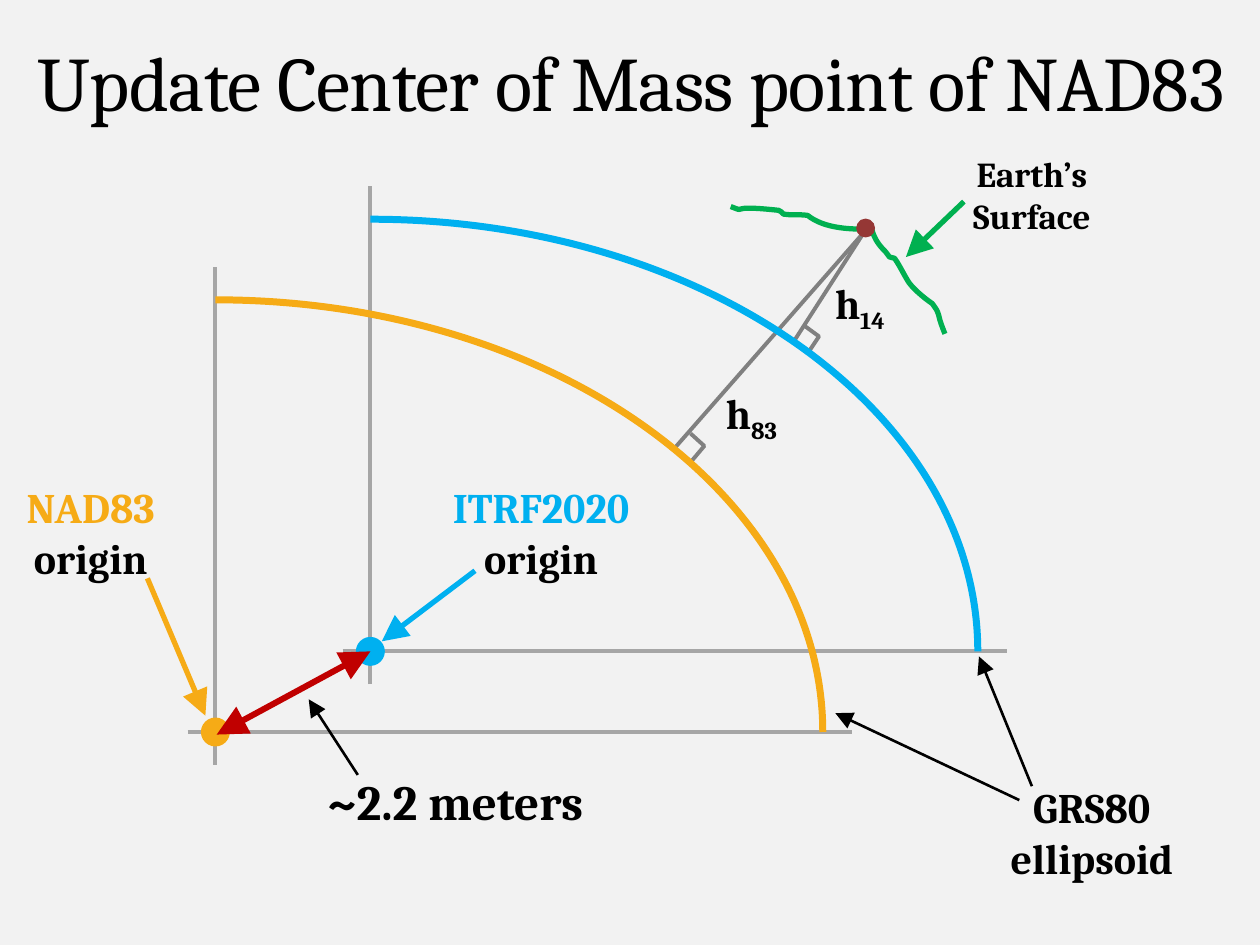
import lxml.etree
import pptx
import pptx.dml.color
import pptx.enum.shapes
import pptx.enum.text
import pptx.oxml.ns
import pptx.util

Inches = pptx.util.Inches
RGBColor = pptx.dml.color.RGBColor
qn = pptx.oxml.ns.qn

FONT = "Cambria"
PAPER = RGBColor(0xF2, 0xF2, 0xF2)
BLACK = RGBColor(0, 0, 0)
AXIS_GREY = RGBColor(0xA6, 0xA6, 0xA6)
HEIGHT_GREY = RGBColor(0x80, 0x80, 0x80)
GREEN = RGBColor(0x00, 0xB0, 0x50)
ORANGE = RGBColor(0xF6, 0xAB, 0x16)
BLUE = RGBColor(0x00, 0xB0, 0xF0)
RED = RGBColor(0xC0, 0, 0)
BROWN = RGBColor(0x95, 0x37, 0x35)

NAD83_ORIGIN = (1.71, 5.81)
ITRF_ORIGIN = (2.94, 5.17)
STATION = (6.86, 1.84)
ARC_WIDTH, ARC_HEIGHT = 4.82, 3.43


def add_line(page, start, end, color, width, heads=()):
    """Straight line; heads may hold "headEnd" (start) and "tailEnd" (end)."""
    line = page.shapes.add_connector(
        pptx.enum.shapes.MSO_CONNECTOR.STRAIGHT,
        *(Inches(value) for value in (*start, *end)))
    line.line.color.rgb = color
    line.line.width = pptx.util.Pt(width)
    properties = line._element.spPr
    for head in heads:
        lxml.etree.SubElement(properties.find(qn("a:ln")), qn("a:" + head),
                              type="triangle", w="lg", len="lg")
    lxml.etree.SubElement(properties, qn("a:effectLst"))


def add_outline(page, points, color, width):
    """Open, unfilled outline through points."""
    corners = [(Inches(x), Inches(y)) for x, y in points]
    builder = page.shapes.build_freeform(*corners[0], scale=1.0)
    builder.add_line_segments(corners[1:], close=False)
    outline = builder.convert_to_shape()
    outline.shadow.inherit = False
    outline.fill.background()
    outline.line.color.rgb = color
    outline.line.width = pptx.util.Pt(width)
    return outline


def add_curve(page, points, color, width):
    """Joined cubic curves: a start, then two controls and an end for each."""
    outline = add_outline(page, points, color, width)
    steps = list(outline._element.iter(qn("a:lnTo")))
    for first in range(0, len(steps), 3):
        curve = steps[first]
        curve.tag = qn("a:cubicBezTo")
        for step in steps[first + 1:first + 3]:
            curve.append(step[0])
            step.getparent().remove(step)


def add_dot(page, center, size, color):
    dot = page.shapes.add_shape(
        pptx.enum.shapes.MSO_SHAPE.FLOWCHART_CONNECTOR, Inches(center[0] - size / 2),
        Inches(center[1] - size / 2), Inches(size), Inches(size))
    dot.shadow.inherit = False
    dot.fill.solid()
    dot.fill.fore_color.rgb = color
    dot.line.fill.background()


def style_span(span, size, color, bold):
    span.font.name = FONT
    span.font.size = pptx.util.Pt(size)
    span.font.bold = bold
    span.font.color.rgb = color


def add_label(page, box, lines, size, first_color=BLACK, subscript="", wrap=False):
    label = page.shapes.add_textbox(*(Inches(value) for value in box))
    frame = label.text_frame
    frame.text = "\n".join(lines)
    frame.word_wrap = wrap
    frame.auto_size = pptx.enum.text.MSO_AUTO_SIZE.SHAPE_TO_FIT_TEXT
    frame.vertical_anchor = pptx.enum.text.MSO_ANCHOR.MIDDLE
    if subscript:
        span = frame.paragraphs[0].add_run()
        span.text = subscript
        span.font._element.set("baseline", "-25000")
    for index, para in enumerate(frame.paragraphs):
        para.alignment = pptx.enum.text.PP_ALIGN.CENTER
        for span in para.runs:
            style_span(span, size, BLACK if index else first_color, True)


def fill_title(page, box):
    title = page.shapes.title
    title.left, title.top, title.width, title.height = (Inches(value) for value in box)
    frame = title.text_frame
    frame.text = "Update Center of Mass point of "
    frame.margin_left = frame.margin_right = frame.margin_bottom = 0
    frame.margin_top = Inches(0.02)
    frame.word_wrap = True
    frame.auto_size = pptx.enum.text.MSO_AUTO_SIZE.SHAPE_TO_FIT_TEXT
    frame.vertical_anchor = pptx.enum.text.MSO_ANCHOR.MIDDLE
    para = frame.paragraphs[0]
    para.alignment = pptx.enum.text.PP_ALIGN.CENTER
    para._p.get_or_add_pPr().set("marL", str(Inches(0.02)))
    para.add_run().text = "NAD83"
    for span, spacing in zip(para.runs, ("-40", "0")):
        style_span(span, 44, BLACK, False)
        span.font._element.set("spc", spacing)


def draw_axes(page, origin):
    x, y = origin
    add_line(page, (x, y + 0.26), (x, y - 3.69), AXIS_GREY, 2.25)
    add_line(page, (x - 0.22, y), (x + 5.05, y), AXIS_GREY, 2.25)


def draw_ellipsoid(page, origin, color):
    """Quarter ellipse from above the origin to its right."""
    x, y = origin
    top, right = y - ARC_HEIGHT, x + ARC_WIDTH
    add_curve(page, [(x, top), (x + 2.66, top), (right, y - 1.89), (right, y)], color, 4)


def draw_height(page, foot, corner):
    """Height from an ellipsoid to the station, with its right-angle mark."""
    add_line(page, foot, STATION, HEIGHT_GREY, 2.25)
    add_outline(page, corner, HEIGHT_GREY, 2.25)


def draw_surface(page, left, top):
    """Terrain profile, in offsets from its top left corner."""
    profile = [
        (0.07, 0.02),
        (0.23, 0.08), (0, 0), (0.45, 0.05),
        (0.47, 0.05), (0.47, 0.07), (0.49, 0.08),
        (0.55, 0.09), (0.61, 0.08), (0.68, 0.09),
        (0.82, 0.2), (1.03, 0.2), (1.19, 0.2),
        (1.21, 0.28), (1.25, 0.33), (1.3, 0.38),
        (1.31, 0.39), (1.32, 0.41), (1.33, 0.42),
        (1.34, 0.43), (1.36, 0.42), (1.37, 0.43),
        (1.4, 0.47), (1.44, 0.55), (1.47, 0.6),
        (1.5, 0.66), (1.61, 0.75), (1.67, 0.79),
        (1.69, 0.82), (1.71, 0.84), (1.72, 0.88),
        (1.73, 0.93), (1.75, 0.98), (1.77, 1.03),
    ]
    add_curve(page, [(left + x, top + y) for x, y in profile], GREEN, 3)


def draw_labels(page):
    add_label(page, (2.35, 6.07, 2.53, 0.57), ["~2.2 meters"], 28, wrap=True)
    add_label(page, (0.08, 3.77, 1.28, 0.91), ["NAD83", "origin"], 24, ORANGE)
    add_label(page, (3.38, 3.77, 1.83, 0.91), ["ITRF2020", "origin"], 24, BLUE, wrap=True)
    add_label(page, (7.61, 1.16, 1.16, 0.77), ["Earth’s", "Surface"], 20)
    add_label(page, (5.63, 3.05, 0.67, 0.5), ["h"], 24, subscript="83")
    add_label(page, (6.49, 2.18, 0.67, 0.5), ["h"], 24, subscript="14")
    add_label(page, (7.89, 6.15, 1.55, 0.91), ["GRS80", "ellipsoid"], 24)


def draw_pointers(page):
    """Arrows from the labels to what they name."""
    for start, end, color, width in (
            ((1.17, 4.59), (1.63, 5.68), ORANGE, 3),
            ((3.77, 4.53), (3.03, 5.09), BLUE, 3),
            ((8.09, 6.35), (6.63, 5.66), BLACK, 1.5),
            ((8.19, 6.24), (7.77, 5.21), BLACK, 1.5),
            ((7.65, 1.6), (7.19, 2.04), GREEN, 3),
            ((2.84, 6.15), (2.45, 5.55), BLACK, 1.5)):
        add_line(page, start, end, color, width, ["tailEnd"])


def main():
    deck = pptx.Presentation()
    deck.slide_width, deck.slide_height = Inches(10), Inches(7.5)
    page = deck.slides.add_slide(deck.slide_layouts[5])
    page.background.fill.solid()
    page.background.fill.fore_color.rgb = PAPER
    fill_title(page, (0, 0.25, 10, 0.76))

    # Axes, heights and terrain
    frames = ((NAD83_ORIGIN, ORANGE), (ITRF_ORIGIN, BLUE))
    for origin, color in frames:
        draw_axes(page, origin)
    draw_height(page, (6.3, 2.71), [(6.39, 2.59), (6.5, 2.67), (6.42, 2.79)])
    draw_height(page, (5.36, 3.55), [(5.48, 3.44), (5.59, 3.54), (5.48, 3.67)])
    draw_surface(page, 5.73, 1.62)

    # Labels and their arrows
    draw_labels(page)
    draw_pointers(page)

    # Ellipsoids, points and the shift between origins
    for origin, color in reversed(frames):
        draw_ellipsoid(page, origin, color)
    add_dot(page, (6.87, 1.81), 0.15, BROWN)
    for origin, color in frames:
        add_dot(page, origin, 0.23, color)
    add_line(page, (1.72, 5.83), ITRF_ORIGIN, RED, 3.5, ["headEnd", "tailEnd"])
    deck.save("out.pptx")


if __name__ == "__main__":
    main()
